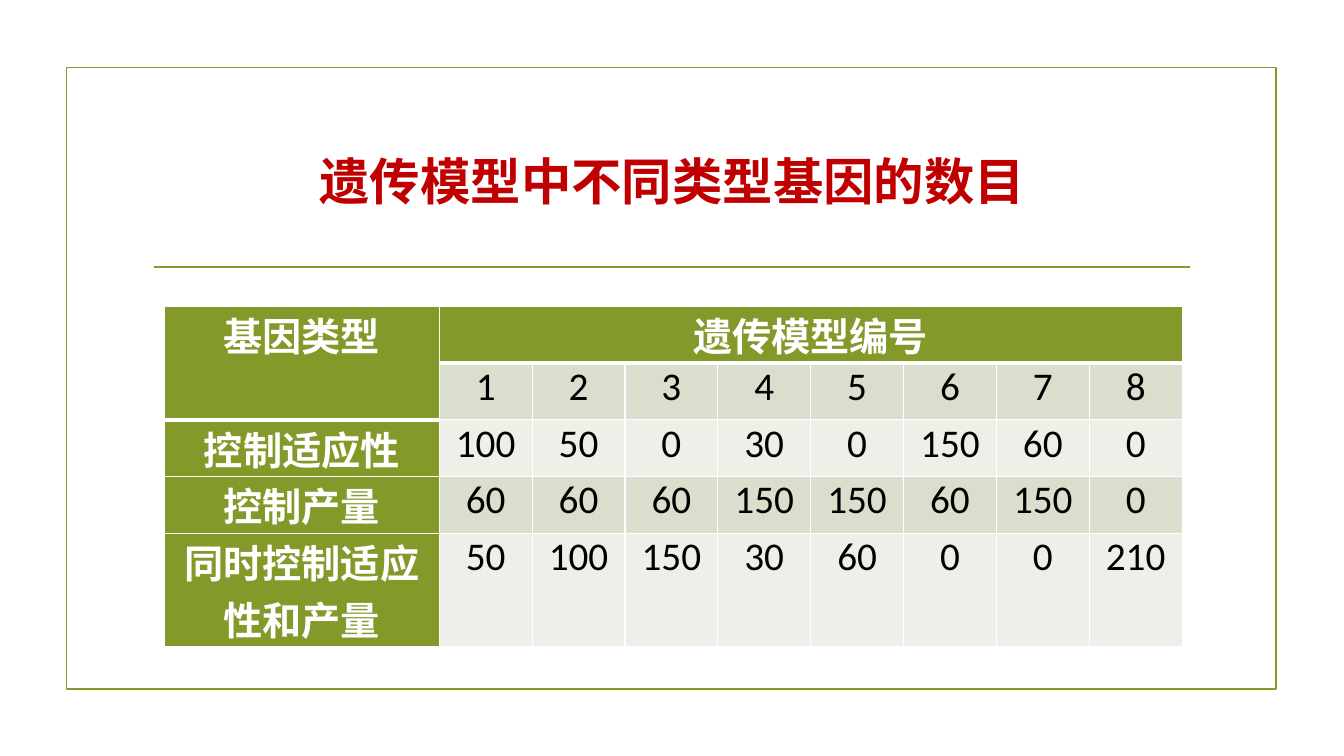
from dataclasses import dataclass

from lxml import etree
from pptx import Presentation
from pptx import util as u
from pptx.dml.color import RGBColor
from pptx.enum import shapes, text
from pptx.oxml import ns

OLIVE, WHITE, BLACK, RED = "83992A", "FFFFFF", "000000", "C00000"
BANDS = ("D9DECD", "EDEFE8")
CJK = "Noto Sans CJK SC"


@dataclass(frozen=True)
class TextFormat:
    name: str
    size: int
    bold: bool
    color: str


@dataclass(frozen=True)
class GeneRow:
    label: str
    counts: tuple[int, ...]
    lines: int = 1


TITLE = TextFormat(CJK, 36, True, RED)
HEADING = TextFormat("Calibri", 28, True, WHITE)
COUNT = TextFormat("Calibri", 28, False, BLACK)

GENE_ROWS = (
    GeneRow("", tuple(range(1, 9))),
    GeneRow("控制适应性", (100, 50, 0, 30, 0, 150, 60, 0)),
    GeneRow("控制产量", (60, 60, 60, 150, 150, 60, 150, 0)),
    GeneRow("同时控制适应性和产量", (50, 100, 150, 30, 60, 0, 0, 210), 2),
)
MODELS = len(GENE_ROWS[0].counts)
LABEL_WIDTH, COUNT_WIDTH, LINE_HEIGHT = 6.93, 2.34, 1.43


def rgb(color: str) -> RGBColor:
    return RGBColor.from_string(color)


def write(frame, words: str, style: TextFormat) -> None:
    paragraph = frame.paragraphs[0]
    paragraph.alignment = text.PP_ALIGN.CENTER
    run = paragraph.add_run()
    run.text = words
    values = {"name": style.name, "size": u.Pt(style.size), "bold": style.bold}
    for key, value in values.items():
        setattr(run.font, key, value)
    run.font.color.rgb = rgb(style.color)
    east_asian = etree.SubElement(run._r.get_or_add_rPr(), ns.qn("a:ea"))
    east_asian.set("typeface", CJK)


def outline(line) -> None:
    line.color.rgb = rgb(OLIVE)
    line.width = u.Pt(1.25)


def style_cell(cell, fill: str, top: int, bottom: int) -> None:
    margins = {"margin_left": 0.18, "margin_right": 0.18,
               "margin_top": 0, "margin_bottom": 0}
    for key, value in margins.items():
        setattr(cell, key, u.Cm(value))
    properties = cell._tc.get_or_add_tcPr()
    for side, width in {"L": 1, "R": 1, "T": top, "B": bottom}.items():
        border = etree.SubElement(properties, ns.qn(f"a:ln{side}"), w=str(u.Pt(width)))
        solid = etree.SubElement(border, ns.qn("a:solidFill"))
        etree.SubElement(solid, ns.qn("a:srgbClr"), val=WHITE)
    cell.fill.solid()
    cell.fill.fore_color.rgb = rgb(fill)


def draw_frame(slide) -> None:
    border = slide.shapes.add_shape(shapes.MSO_SHAPE.RECTANGLE, u.Cm(1.68),
                                    u.Cm(1.7), u.Cm(30.48), u.Cm(15.67))
    border.shadow.inherit = False
    border.fill.background()
    outline(border.line)
    divider = slide.shapes.add_connector(shapes.MSO_CONNECTOR.STRAIGHT, u.Cm(3.89),
                                         u.Cm(6.73), u.Cm(30), u.Cm(6.73))
    outline(divider.line)
    etree.SubElement(divider._element.spPr, ns.qn("a:effectLst"))


def draw_title(slide) -> None:
    title = slide.shapes.add_textbox(u.Cm(3.61), u.Cm(2.72), u.Cm(26.67), u.Cm(3.63))
    title.text_frame.word_wrap = True
    title.text_frame.vertical_anchor = text.MSO_ANCHOR.MIDDLE
    write(title.text_frame, "遗传模型中不同类型基因的数目", TITLE)


def draw_gene_table(slide) -> None:
    heights = [LINE_HEIGHT] + [LINE_HEIGHT * row.lines for row in GENE_ROWS]
    widths = [LABEL_WIDTH] + [COUNT_WIDTH] * MODELS
    genes = slide.shapes.add_table(len(heights), len(widths), u.Cm(4.14), u.Cm(7.72),
                                   u.Cm(sum(widths)), u.Cm(sum(heights))).table
    for column, width in zip(genes.columns, widths):
        column.width = u.Cm(width)
    for row, height in zip(genes.rows, heights):
        row.height = u.Cm(height)

    # Fills and borders: a thick rule closes the headings
    for r in range(len(heights)):
        for c in range(len(widths)):
            last_heading = 1 if c == 0 else 0
            fill = OLIVE if r == 0 or c == 0 else BANDS[(r - 1) % 2]
            style_cell(genes.cell(r, c), fill,
                       top=3 if r == last_heading + 1 else 1,
                       bottom=3 if r <= last_heading and (c or r) else 1)

    # Merged headings
    gene_type, model_number = genes.cell(0, 0), genes.cell(0, 1)
    gene_type.merge(genes.cell(1, 0))
    model_number.merge(genes.cell(0, MODELS))
    model_number.vertical_anchor = text.MSO_ANCHOR.MIDDLE
    write(gene_type.text_frame, "基因类型", HEADING)
    write(model_number.text_frame, "遗传模型编号", HEADING)

    # Model numbers and gene counts
    for r, gene_row in enumerate(GENE_ROWS, start=1):
        if gene_row.label:
            write(genes.cell(r, 0).text_frame, gene_row.label, HEADING)
        for c, count in enumerate(gene_row.counts, start=1):
            write(genes.cell(r, c).text_frame, str(count), COUNT)


def main() -> None:
    deck = Presentation()
    deck.slide_width, deck.slide_height = u.Cm(33.87), u.Cm(19.05)
    slide = deck.slides.add_slide(deck.slide_layouts[6])
    draw_frame(slide)
    draw_title(slide)
    draw_gene_table(slide)
    deck.save("out.pptx")


if __name__ == "__main__":
    main()
